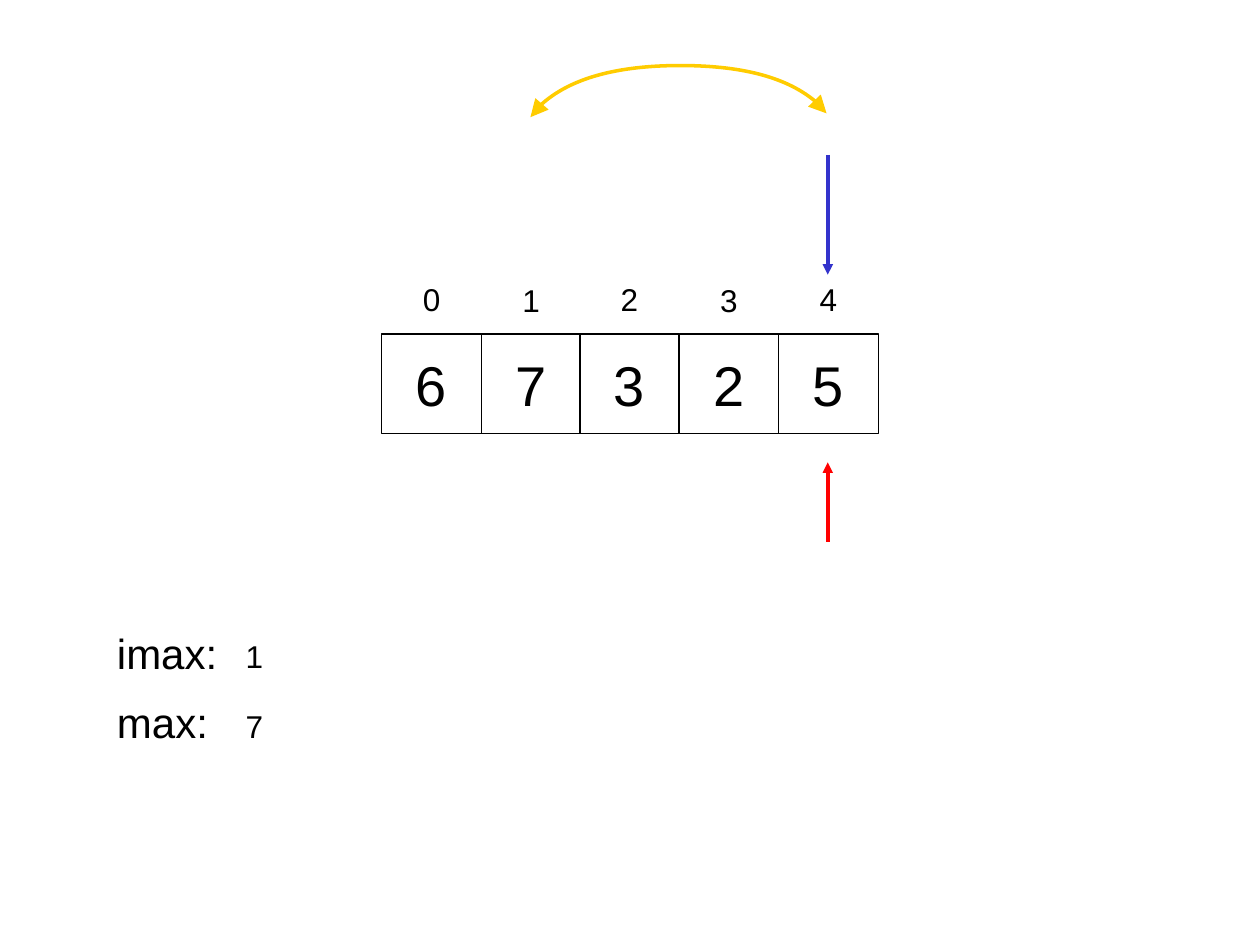
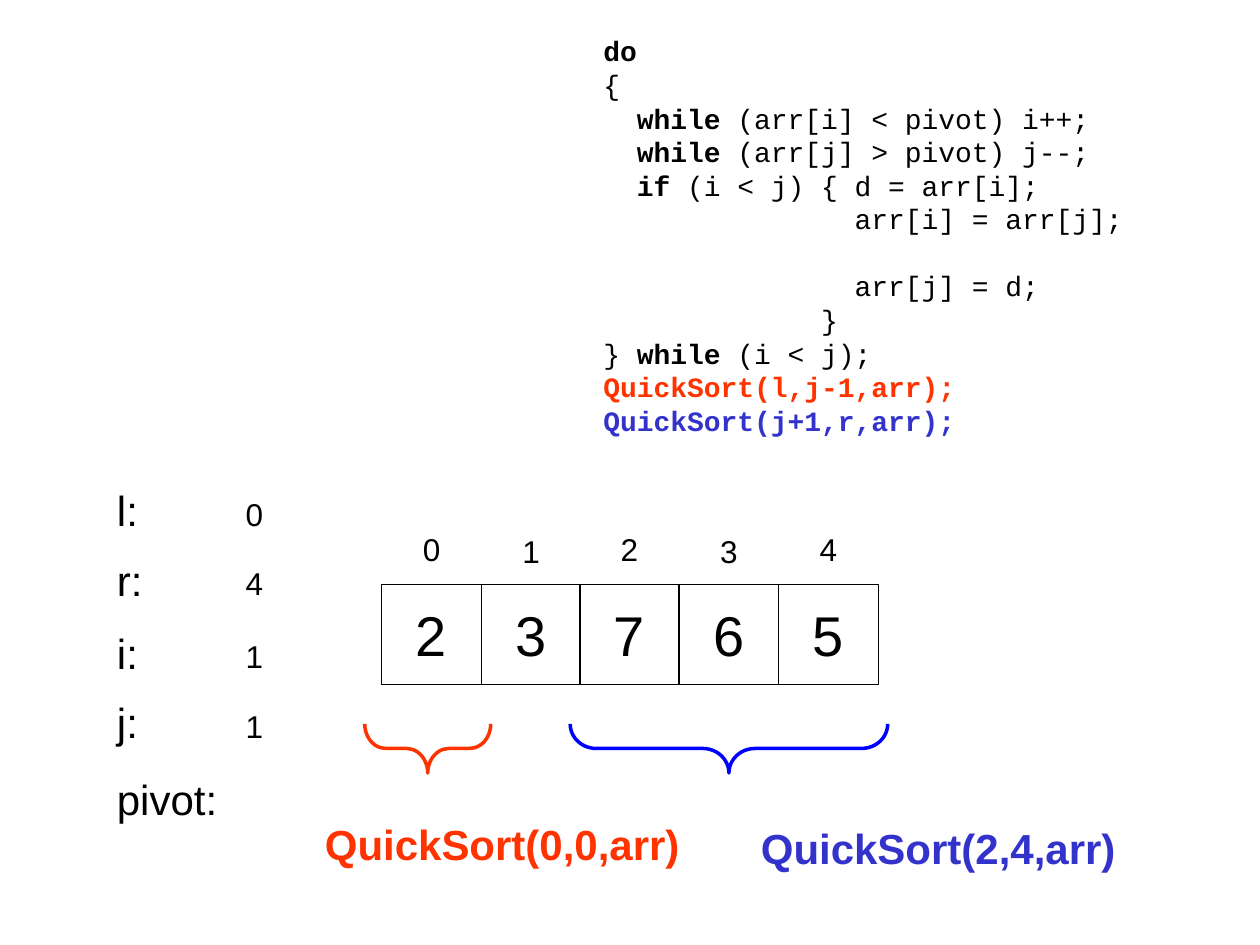
import pptx
import pptx.util
import pptx.dml.color
import pptx.enum.shapes
import pptx.enum.text
import pptx.oxml.ns
from lxml import etree

PX = 9144  # 100 px to the inch
RGB = pptx.dml.color.RGBColor
BLACK = RGB(0x00, 0x00, 0x00)
INDIGO = RGB(0x33, 0x33, 0xCC)
BLUE = RGB(0x00, 0x00, 0xFF)
RED = RGB(0xFF, 0x00, 0x00)
ORANGE = RGB(0xFF, 0x33, 0x00)
YELLOW = RGB(0xFF, 0xCC, 0x00)
SHAPE = pptx.enum.shapes.MSO_SHAPE
CENTER = pptx.enum.text.PP_ALIGN.CENTER
FIT = pptx.enum.text.MSO_AUTO_SIZE.SHAPE_TO_FIT_TEXT
Pt = pptx.util.Pt
qn = pptx.oxml.ns.qn

CELL = 79
ARRAY_LEFT = 303
PITCH = 78.75


def add_text(s, x, y, w, h, text, size, color=BLACK, bold=False, align=None, fit=True):
    tf = s.shapes.add_textbox(x * PX, y * PX, w * PX, h * PX).text_frame
    tf.word_wrap = True
    if fit:
        tf.auto_size = FIT
    p = tf.paragraphs[0]
    p.alignment = align
    r = p.add_run()
    r.text = text
    r.font.color.rgb = color
    for name, value in {"name": "Arial", "size": Pt(size), "bold": bold}.items():
        setattr(r.font, name, value)


def style_line(sp, color, heads=(), size="med"):
    """Colour a 2 pt line, drop its shadow and add the named arrowheads."""
    sp.line.color.rgb = color
    sp.line.width = Pt(2)
    ln = sp.line._get_or_add_ln()
    for head in heads:
        etree.SubElement(ln, qn("a:" + head), type="triangle", w=size, len=size)
    if sp._element.spPr.find(qn("a:effectLst")) is None:
        etree.SubElement(sp._element.spPr, qn("a:effectLst"))


prs = pptx.Presentation()
prs.slide_width, prs.slide_height = 1000 * PX, 750 * PX

# Each slide: array values, top of the array, and variables as (name, value, top)
steps = [
    ("67325", 265, [("imax:", "1", 493), ("max:", "7", 548)]),
    ("23765", 464, [("l:", "0", 380), ("r:", "4", 435), ("i:", "1", 493),
                    ("j:", "1", 548), ("pivot:", "", 609)]),
]
slides = []
for values, top, variables in steps:
    s = prs.slides.add_slide(prs.slide_layouts[6])
    slides.append(s)
    for i, value in enumerate(values):
        x = round(ARRAY_LEFT + i * PITCH)
        sp = s.shapes.add_shape(SHAPE.RECTANGLE, x * PX, top * PX, CELL * PX, CELL * PX)
        sp.shadow.inherit = False
        sp.fill.background()
        sp.line.color.rgb = BLACK
        sp.line.width = Pt(0.75)
        tf = sp.text_frame
        tf.word_wrap = False
        p = tf.paragraphs[0]
        p.alignment = CENTER
        r = p.add_run()
        r.text = value
        r.font.name, r.font.size = "Arial", Pt(32)
        r.font.color.rgb = BLACK
        add_text(s, x, top - 48 + i % 2, CELL, 39, str(i), 18, align=CENTER, fit=False)
    for name, value, y in variables:
        add_text(s, 83, y, 110, 50, name, 24)
        if value:
            add_text(s, 185, y + 8, 31, 40, value, 18)

swap, split = slides

# Pointers to the last cell
for y1, y2, color in [(123, 218, INDIGO), (430, 367, RED)]:
    c = swap.shapes.add_connector(pptx.enum.shapes.MSO_CONNECTOR.STRAIGHT,
                                  657 * PX, y1 * PX, 657 * PX, y2 * PX)
    style_line(c, color, ["tailEnd"])

# Swap arc: two cubic curves, every third point lies on the arc
arc_points = [(436, 69), (484, 52), (540, 52), (593, 52), (640, 67), (656, 90)]
builder = swap.shapes.build_freeform(421, 93, scale=PX)
builder.add_line_segments(arc_points, close=False)
arc = builder.convert_to_shape()
arc.fill.background()
path = arc._element.find(".//" + qn("a:path"))
segments = path.findall(qn("a:lnTo"))
for start in (0, 3):
    curve = etree.SubElement(path, qn("a:cubicBezTo"))
    for segment in segments[start:start + 3]:
        curve.append(segment[0])
        path.remove(segment)
style_line(arc, YELLOW, ["headEnd", "tailEnd"], "lg")

# Braces under the two parts, with their recursive calls
for x, y, h, adj, color in [(320, 544, 100, (0.43, 0.5), ORANGE),
                            (559, 468, 252, (0.53, 0.5), BLUE)]:
    sp = split.shapes.add_shape(SHAPE.LEFT_BRACE, x * PX, y * PX, 39 * PX, h * PX)
    sp.rotation = 270
    for i, value in enumerate(adj):
        sp.adjustments[i] = value
    sp.fill.background()
    style_line(sp, color)
add_text(split, 248, 645, 331, 50, "QuickSort(0,0,arr)", 24, ORANGE, True)
add_text(split, 594, 648, 331, 50, "QuickSort(2,4,arr)", 24, INDIGO, True)

# Code, with bold parts between asterisks
code = [
    ("*do*", BLACK),
    ("{", BLACK),
    ("  *while* (arr[i] < pivot) i++;", BLACK),
    ("  *while* (arr[j] > pivot) j--;", BLACK),
    ("  *if* (i < j) { d = arr[i];", BLACK),
    ("               arr[i] = arr[j];", BLACK),
    ("               arr[j] = d;", BLACK),
    ("             }", BLACK),
    ("} *while* (i < j);", BLACK),
    ("*QuickSort(l,j-1,arr);*", ORANGE),
    ("*QuickSort(j+1,r,arr);*", INDIGO),
]
LEADING = Pt(19.2)
tf = split.shapes.add_textbox(469 * PX, 22 * PX, 500 * PX, 304 * PX).text_frame
tf.word_wrap = True
for n, (line, color) in enumerate(code):
    p = tf.paragraphs[0] if n == 0 else tf.add_paragraph()
    p.line_spacing = LEADING
    if "arr[j] = d" in line:
        p.space_before = LEADING
    for k, part in enumerate(line.split("*")):
        if part:
            r = p.add_run()
            r.text = part
            r.font.color.rgb = color
            for name, value in {"name": "Courier New", "size": Pt(16), "bold": k % 2 == 1}.items():
                setattr(r.font, name, value)

prs.save("out.pptx")
